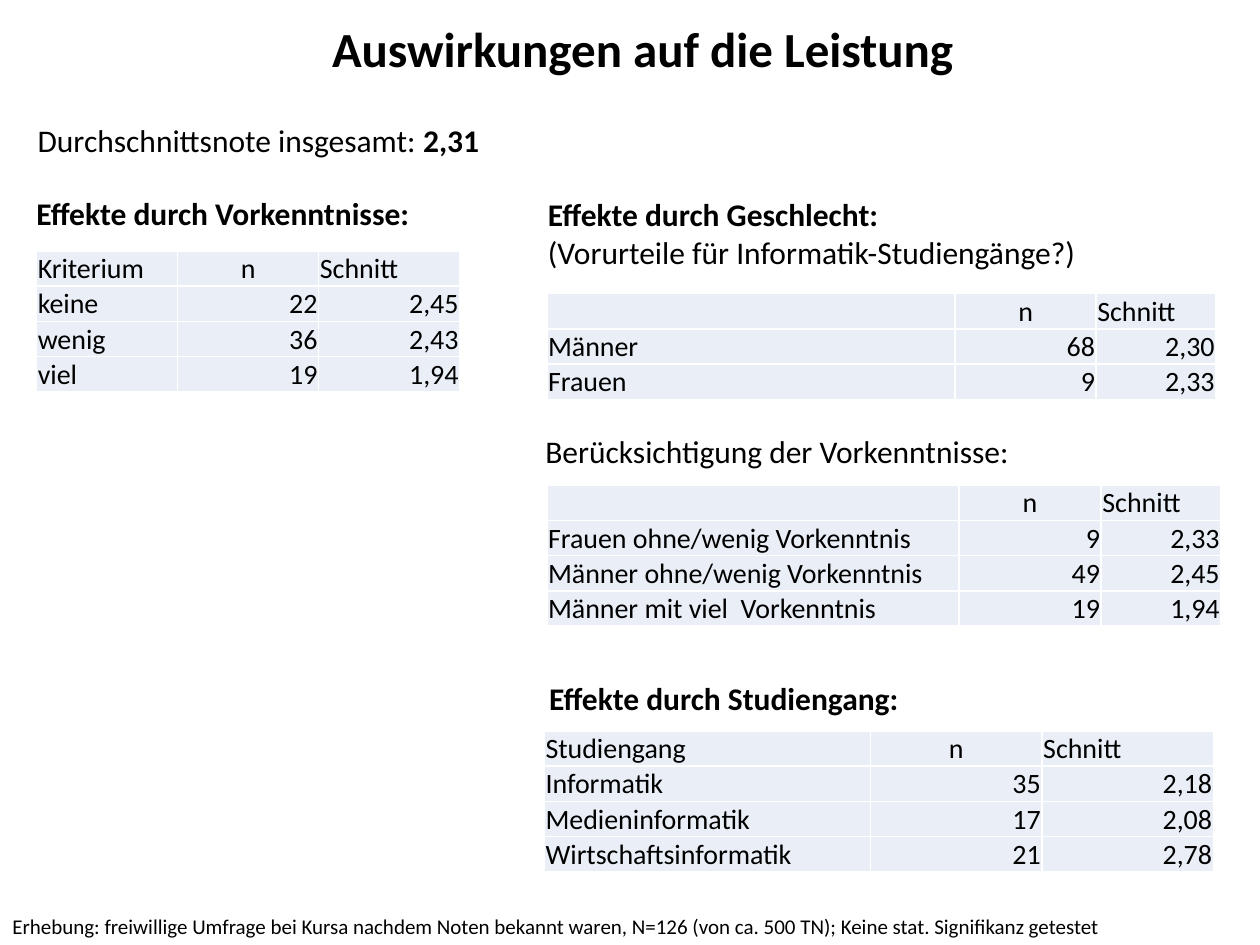
from dataclasses import dataclass

from lxml import etree
from pptx import Presentation
from pptx.dml.color import RGBColor
from pptx.enum.text import MSO_ANCHOR, MSO_AUTO_SIZE, PP_ALIGN
from pptx.oxml.ns import qn
from pptx.util import Inches, Pt

LEFT, CENTER, RIGHT = PP_ALIGN.LEFT, PP_ALIGN.CENTER, PP_ALIGN.RIGHT
BOTTOM = MSO_ANCHOR.BOTTOM
FIT_SHAPE = MSO_AUTO_SIZE.SHAPE_TO_FIT_TEXT

BLACK = RGBColor(0x00, 0x00, 0x00)
WHITE = RGBColor(0xFF, 0xFF, 0xFF)
PALE_BLUE = RGBColor(0xEA, 0xEF, 0xF7)
FONT = "Calibri"
CELL_SIZE = 16
ROW_HEIGHT = 0.28
CELL_MARGIN = 0.01


@dataclass
class Span:
    text: str
    bold: bool = False


@dataclass
class Label:
    left: float
    top: float
    width: float
    height: float
    lines: list[list[Span]]
    size: int = 18
    align: PP_ALIGN = LEFT
    wrap: bool = False


@dataclass
class GradeTable:
    left: float
    top: float
    widths: list[float]
    heading: str
    rows: list[tuple[str, str, str]]


LABELS = [
    Label(1.32, 0.1, 7.56, 0.57, [[Span("Auswirkungen auf die Leistung", True)]],
          size=28, align=CENTER, wrap=True),
    Label(0, 7.2, 10.17, 0.3,
          [[Span("Erhebung: freiwillige Umfrage bei Kursa nachdem Noten bekannt waren, "
                 "N=126 (von ca. 500 TN); Keine stat. Signifikanz getestet")]],
          size=12, wrap=True),
    Label(0.2, 0.91, 3.75, 0.4,
          [[Span("Durchschnittsnote insgesamt: "), Span("2,31", True)]]),
    Label(0.19, 1.49, 3.19, 0.4, [[Span("Effekte durch Vorkenntnisse:", True)]]),
    Label(4.25, 1.5, 4.45, 0.71,
          [[Span("Effekte durch Geschlecht:", True)],
           [Span("(Vorurteile für Informatik-Studiengänge?)")]]),
    Label(4.23, 3.38, 3.92, 0.4, [[Span("Berücksichtigung der Vorkenntnisse:")]]),
    Label(4.26, 5.34, 3.01, 0.4, [[Span("Effekte durch Studiengang:", True)]]),
]

TABLES = [
    GradeTable(0.29, 1.99, [1.12, 1.12, 1.12], "Kriterium",
               [("keine", "22", "2,45"), ("wenig", "36", "2,43"), ("viel", "19", "1,94")]),
    GradeTable(4.34, 2.33, [3.24, 1.12, 0.95], "",
               [("Männer", "68", "2,30"), ("Frauen", "9", "2,33")]),
    GradeTable(4.34, 3.85, [3.27, 1.13, 0.95], "",
               [("Frauen ohne/wenig Vorkenntnis", "9", "2,33"),
                ("Männer ohne/wenig Vorkenntnis", "49", "2,45"),
                ("Männer mit viel  Vorkenntnis", "19", "1,94")]),
    GradeTable(4.32, 5.8, [2.59, 1.36, 1.36], "Studiengang",
               [("Informatik", "35", "2,18"), ("Medieninformatik", "17", "2,08"),
                ("Wirtschaftsinformatik", "21", "2,78")]),
]


def add_span(para, text: str, *, size: int, bold: bool = False) -> None:
    span = para.add_run()
    span.text = text
    span.font.name = FONT
    span.font.size = Pt(size)
    span.font.bold = bold
    span.font.color.rgb = BLACK


def add_label(page, label: Label) -> None:
    box = page.shapes.add_textbox(Inches(label.left), Inches(label.top),
                                  Inches(label.width), Inches(label.height))
    frame = box.text_frame
    frame.word_wrap = label.wrap
    frame.auto_size = FIT_SHAPE
    for index, line in enumerate(label.lines):
        para = frame.add_paragraph() if index else frame.paragraphs[0]
        para.alignment = label.align
        for span in line:
            add_span(para, span.text, size=label.size, bold=span.bold)


def add_borders(cell) -> None:
    properties = cell._tc.get_or_add_tcPr()
    for side in ("a:lnL", "a:lnR", "a:lnT", "a:lnB"):
        line = etree.SubElement(properties, qn(side), w=str(Pt(1)))
        fill = etree.SubElement(line, qn("a:solidFill"))
        etree.SubElement(fill, qn("a:srgbClr"), val=str(WHITE))


def fill_cell(cell, text: str, align: PP_ALIGN) -> None:
    cell.margin_left = cell.margin_right = cell.margin_top = Inches(CELL_MARGIN)
    cell.margin_bottom = 0
    cell.vertical_anchor = BOTTOM
    add_borders(cell)
    cell.fill.solid()
    cell.fill.fore_color.rgb = PALE_BLUE
    para = cell.text_frame.paragraphs[0]
    para.alignment = align
    if text:
        add_span(para, text, size=CELL_SIZE)
    else:
        # An empty cell keeps the row height of the text size
        etree.SubElement(para._p, qn("a:endParaRPr"), sz=str(CELL_SIZE * 100))


def add_grade_table(page, grades: GradeTable) -> None:
    rows = [(grades.heading, "n", "Schnitt"), *grades.rows]
    table = page.shapes.add_table(
        len(rows), len(grades.widths), Inches(grades.left), Inches(grades.top),
        Inches(sum(grades.widths)), Inches(ROW_HEIGHT * len(rows))).table
    table.first_row = False
    table.horz_banding = False
    for column, width in zip(table.columns, grades.widths):
        column.width = Inches(width)
    for row_index, texts in enumerate(rows):
        table.rows[row_index].height = Inches(ROW_HEIGHT)
        aligns = (LEFT, RIGHT, RIGHT) if row_index else (LEFT, CENTER, LEFT)
        for column_index, (text, align) in enumerate(zip(texts, aligns)):
            fill_cell(table.cell(row_index, column_index), text, align)


def main() -> None:
    deck = Presentation()
    deck.slide_width, deck.slide_height = Inches(10), Inches(7.5)
    page = deck.slides.add_slide(deck.slide_layouts[6])

    # Title, section headings and survey note
    for label in LABELS:
        add_label(page, label)

    # Average grades per group
    for grades in TABLES:
        add_grade_table(page, grades)

    deck.save("out.pptx")


if __name__ == "__main__":
    main()
